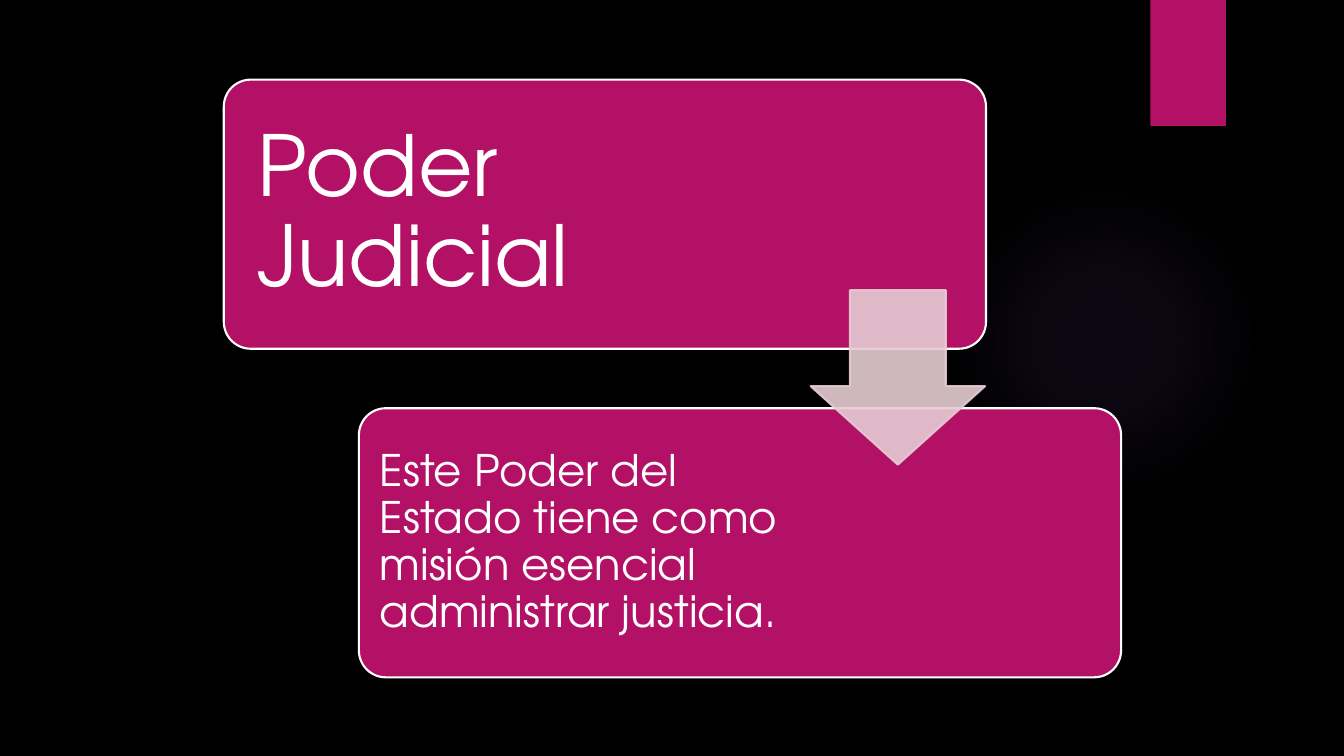
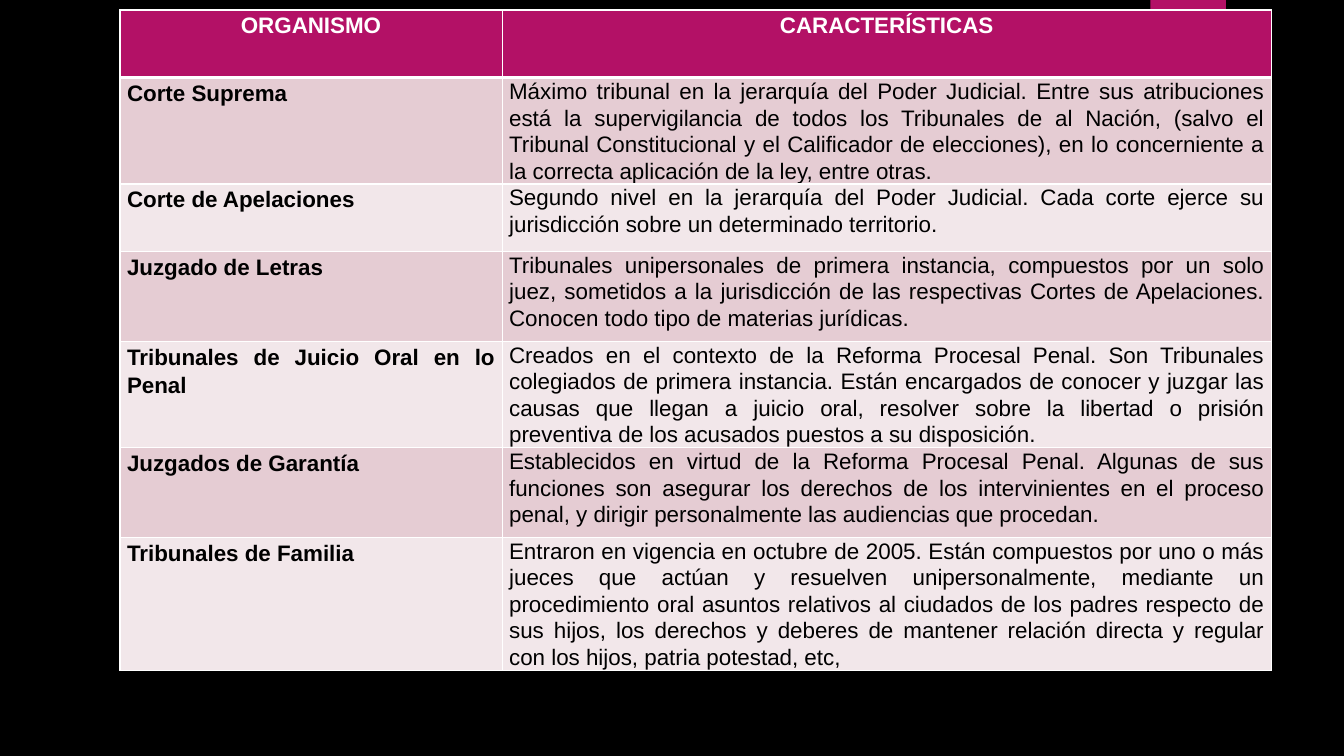
from dataclasses import dataclass

import lxml.etree
import pptx
import pptx.dml.color
import pptx.enum.shapes
import pptx.enum.text
import pptx.oxml.ns
import pptx.util

Inches = pptx.util.Inches
Pt = pptx.util.Pt
SHAPE = pptx.enum.shapes.MSO_SHAPE
ALIGN = pptx.enum.text.PP_ALIGN
ANCHOR = pptx.enum.text.MSO_ANCHOR
qn = pptx.oxml.ns.qn
rgb = pptx.dml.color.RGBColor.from_string


@dataclass(frozen=True)
class Theme:
    background: str = "000000"
    accent: str = "B31166"
    glow: str = "9B6BF2"
    pale: str = "E5CCD3"
    paler: str = "F2E7EA"
    light: str = "FFFFFF"
    dark: str = "000000"
    display_font: str = "TeX Gyre Adventor"
    table_font: str = "Arial"
    title_size: int = 60
    body_size: int = 31
    table_size: int = 16
    outline: float = 1.5


theme = Theme()


def add_shape(slide, kind, box, fill, line=None):
    sp = slide.shapes.add_shape(kind, *map(Inches, box))
    sp.shadow.inherit = False
    sp.fill.solid()
    sp.fill.fore_color.rgb = rgb(fill)
    if line:
        sp.line.color.rgb = rgb(line)
        sp.line.width = Pt(theme.outline)
    else:
        sp.line.fill.background()
    return sp


def style_paragraph(p, font, size, color, spacing, align=ALIGN.LEFT, bold=False):
    p.alignment = align
    p.line_spacing = spacing
    p.font.name = font
    p.font.size = Pt(size)
    p.font.color.rgb = rgb(color)
    p.font.bold = bold


prs = pptx.Presentation()
prs.slide_width = Inches(13.33)
prs.slide_height = Inches(7.5)
master = prs.slide_master
master.background.fill.solid()
master.background.fill.fore_color.rgb = rgb(theme.background)

# Slide 1: title card leading to its description
s = prs.slides.add_slide(prs.slide_layouts[5])

# Shared decoration: drawn here, then moved to the master
glow = add_shape(s, SHAPE.OVAL, (9.41, 1.83, 3.08, 3.08), theme.glow)
glow.fill.gradient()
grad = glow.element.spPr.find(qn("a:gradFill"))
grad.clear()
stops = lxml.etree.SubElement(grad, qn("a:gsLst"))
for position, opacity in ((0, 7), (36, 6), (69, 0)):
    stop = lxml.etree.SubElement(stops, qn("a:gs"), pos=str(position * 1000))
    color = lxml.etree.SubElement(stop, qn("a:srgbClr"), val=theme.glow)
    lxml.etree.SubElement(color, qn("a:alpha"), val=str(opacity * 1000))
circle = lxml.etree.SubElement(grad, qn("a:path"), path="circle")
lxml.etree.SubElement(circle, qn("a:fillToRect"), l="50000", t="50000", r="50000", b="50000")
ribbon = add_shape(s, SHAPE.RECTANGLE, (11.41, 0, 0.75, 1.25), theme.accent)
for number, sp in enumerate((glow, ribbon), start=20):
    sp.element.nvSpPr.cNvPr.set("id", str(number))
    master.element.cSld.spTree.append(sp.element)

cards = []
for left, top in ((2.22, 0.79), (3.56, 4.05)):
    card = add_shape(s, SHAPE.ROUNDED_RECTANGLE, (left, top, 7.56, 2.67),
                     theme.accent, theme.light)
    card.adjustments[0] = 0.1
    cards.append(card)
title_card, body_card = cards

title = s.shapes.title
title_card.element.addnext(title.element)
title.left, title.top, title.width, title.height = map(Inches, (2.3, 0.87, 4.8, 2.51))
for sp, text, size, inset, right_inset in (
        (title, "Poder Judicial", theme.title_size, 0.25, 0.25),
        (body_card, "Este Poder del Estado tiene como misión esencial administrar justicia.",
         theme.body_size, 0.13, 3.21)):
    tf = sp.text_frame
    tf.word_wrap = True
    tf.auto_size = pptx.enum.text.MSO_AUTO_SIZE.NONE
    tf.vertical_anchor = ANCHOR.MIDDLE
    tf.margin_left = tf.margin_top = tf.margin_bottom = Inches(inset)
    tf.margin_right = Inches(right_inset)
    tf.text = text
    style_paragraph(tf.paragraphs[0], theme.display_font, size, theme.light, 0.9)

arrow = add_shape(s, SHAPE.DOWN_ARROW, (8.04, 2.88, 1.73, 1.73), theme.pale, theme.pale)
arrow.adjustments[0] = 0.55
arrow.adjustments[1] = 0.45
for color in arrow.element.spPr.iter(qn("a:srgbClr")):
    lxml.etree.SubElement(color, qn("a:alpha"), val="90000")

# Slide 2: table of courts
s = prs.slides.add_slide(prs.slide_layouts[6])
rows = [
    (0.67, "ORGANISMO", "CARACTERÍSTICAS"),
    (0.89, "Corte Suprema",
     "Máximo tribunal en la jerarquía del Poder Judicial. Entre sus atribuciones está la "
     "supervigilancia de todos los Tribunales de al Nación, (salvo el Tribunal Constitucional "
     "y el Calificador de elecciones), en lo concerniente a la correcta aplicación de la ley, "
     "entre otras."),
    (0.67, "Corte de Apelaciones",
     "Segundo nivel en la jerarquía del Poder Judicial. Cada corte ejerce su jurisdicción "
     "sobre un determinado territorio."),
    (0.89, "Juzgado de Letras",
     "Tribunales unipersonales de primera instancia, compuestos por un solo juez, sometidos a "
     "la jurisdicción de las respectivas Cortes de Apelaciones. Conocen todo tipo de materias "
     "jurídicas."),
    (0.89, "Tribunales de Juicio Oral en lo Penal",
     "Creados en el contexto de la Reforma Procesal Penal. Son Tribunales colegiados de "
     "primera instancia. Están encargados de conocer y juzgar las causas que llegan a juicio "
     "oral, resolver sobre la libertad o prisión preventiva de los acusados puestos a su "
     "disposición."),
    (0.89, "Juzgados de Garantía",
     "Establecidos en virtud de la Reforma Procesal Penal. Algunas de sus funciones son "
     "asegurar los derechos de los intervinientes en el proceso penal, y dirigir personalmente "
     "las audiencias que procedan."),
    (1.19, "Tribunales de Familia",
     "Entraron en vigencia en octubre de 2005. Están compuestos por uno o más jueces que "
     "actúan y resuelven unipersonalmente, mediante un procedimiento oral asuntos relativos al "
     "ciudados de los padres respecto de sus hijos, los derechos y deberes de mantener relación "
     "directa y regular con los hijos, patria potestad, etc,"),
]
column_widths = (3.79, 7.63)
table = s.shapes.add_table(
    len(rows), len(column_widths), Inches(1.19), Inches(0.1),
    Inches(sum(column_widths)), Inches(sum(row[0] for row in rows))).table
table.horz_banding = False
for column, width in zip(table.columns, column_widths):
    column.width = Inches(width)

for i, (height, *texts) in enumerate(rows):
    table.rows[i].height = Inches(height)
    header = i == 0
    if header:
        fill = theme.accent
    else:
        fill = theme.pale if i % 2 else theme.paler
    border_widths = {"lnL": 1, "lnR": 1, "lnT": 3 if i == 1 else 1, "lnB": 3 if header else 1}
    for j, text in enumerate(texts):
        cell = table.cell(i, j)
        cell.margin_left = cell.margin_right = Inches(0.07)
        cell.margin_top = cell.margin_bottom = 0
        cell.text = text
        style_paragraph(cell.text_frame.paragraphs[0], theme.table_font, theme.table_size,
                        theme.light if header else theme.dark,
                        1.15 if header or j == 0 else 1.07,
                        ALIGN.CENTER if header else ALIGN.JUSTIFY,
                        bold=header or j == 0)
        tcPr = cell._tc.get_or_add_tcPr()
        for edge, width in border_widths.items():
            ln = lxml.etree.SubElement(tcPr, qn(f"a:{edge}"), w=str(Pt(width)))
            solid = lxml.etree.SubElement(ln, qn("a:solidFill"))
            lxml.etree.SubElement(solid, qn("a:srgbClr"), val=theme.light)
        cell.fill.solid()
        cell.fill.fore_color.rgb = rgb(fill)

prs.save("out.pptx")
